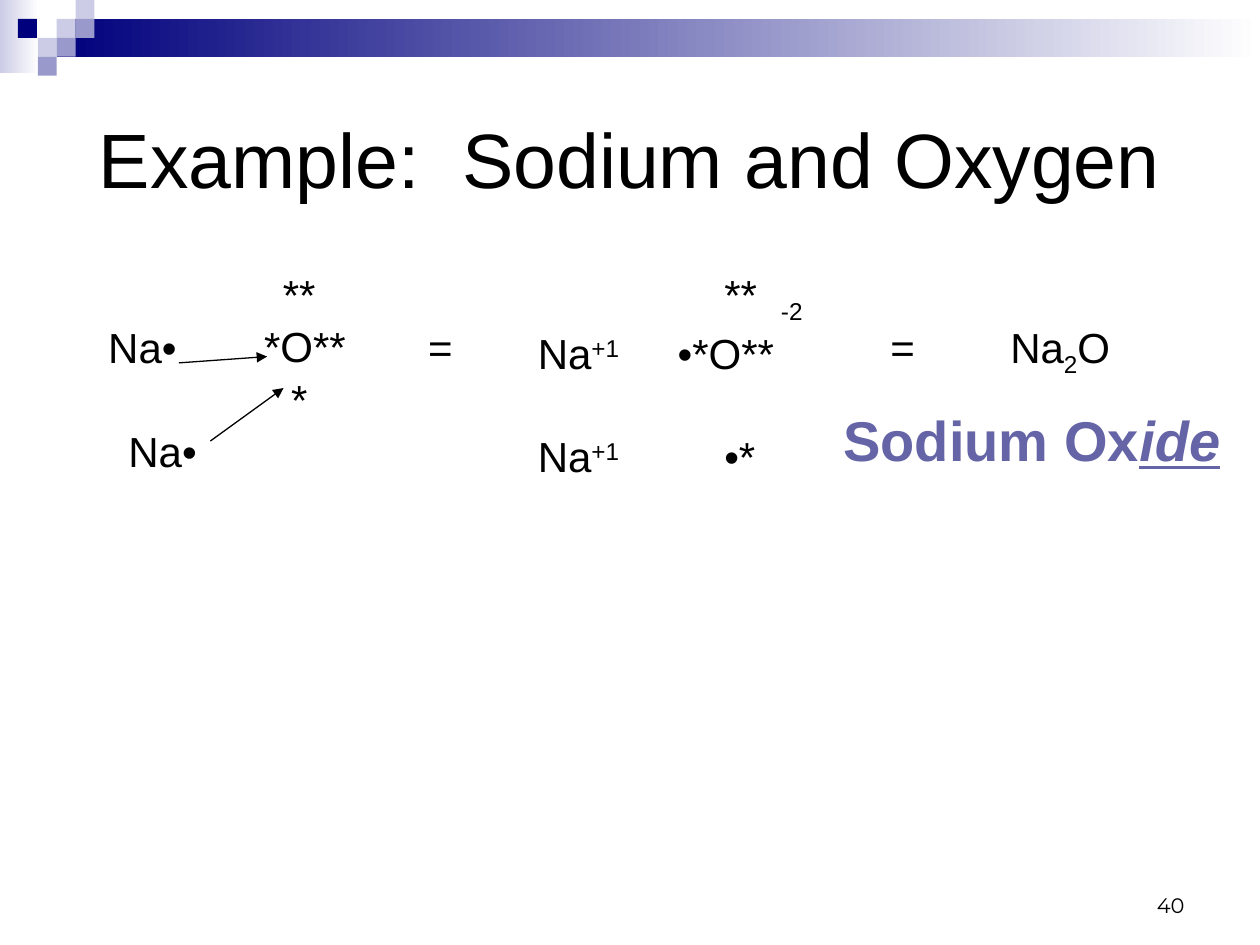
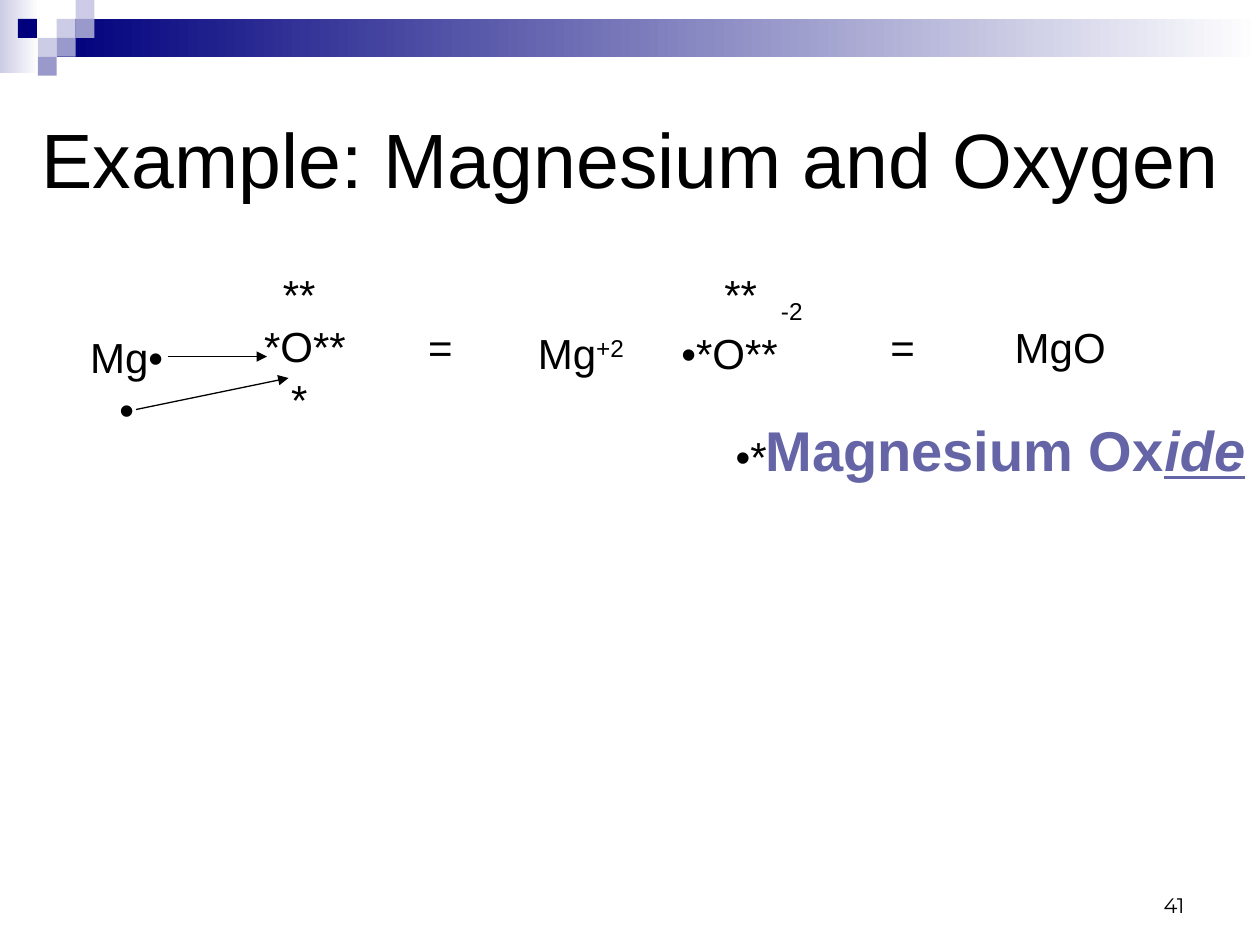
import dataclasses
import typing

import lxml.etree
import pptx
import pptx.dml.color
import pptx.enum.shapes
import pptx.enum.text
import pptx.oxml.ns
import pptx.util

Inches = pptx.util.Inches
Pt = pptx.util.Pt
RGB = pptx.dml.color.RGBColor
Align = pptx.enum.text.PP_ALIGN
Anchor = pptx.enum.text.MSO_ANCHOR
Box = tuple[float, float, float, float]
Spot = tuple[float, float]


# Theme: colours, fonts and type sizes
@dataclasses.dataclass(frozen=True)
class Theme:
    ink: RGB = RGB(0x00, 0x00, 0x00)
    white: RGB = RGB(0xFF, 0xFF, 0xFF)
    navy: RGB = RGB(0x00, 0x00, 0x7D)
    mid: RGB = RGB(0x99, 0x99, 0xCC)
    pale: RGB = RGB(0xCC, 0xCC, 0xE6)
    name: RGB = RGB(0x64, 0x64, 0xA6)
    font: str = "Arial"
    page_font: str = "Montserrat"
    title: int = 44
    head: int = 32
    body: int = 24
    small: int = 12


THEME = Theme()
BODY = {"size": Pt(THEME.body), "name": THEME.font, "color": THEME.ink}
TITLE = BODY | {"size": Pt(THEME.title)}
NAME = BODY | {"size": Pt(THEME.head), "color": THEME.name, "bold": True}
ENDING = {"italic": True, "underline": True}
PAGE = BODY | {"size": Pt(THEME.small), "name": THEME.page_font}


# Parts of a slide
@dataclasses.dataclass(frozen=True)
class Run:
    text: str
    base: int = 0
    style: dict[str, typing.Any] = dataclasses.field(default_factory=dict)


@dataclasses.dataclass(frozen=True)
class Line:
    runs: list[Run]
    tabs: tuple[float, ...] = ()
    indent: float = 0
    before: float = 1.25


@dataclasses.dataclass(frozen=True)
class Label:
    box: Box
    lines: list[Line]
    style: dict[str, typing.Any] = dataclasses.field(default_factory=lambda: BODY)
    align: Align = Align.CENTER
    anchor: Anchor = Anchor.TOP
    wrap: bool = True


@dataclasses.dataclass(frozen=True)
class Page:
    number: int
    title: str
    title_box: Box
    metal: list[Label]
    ions: Label
    result: list[Run]
    oxide: str
    oxide_box: Box
    arrows: list[tuple[Spot, Spot]]


def plain(*texts: str) -> list[Line]:
    return [Line([Run(text)]) for text in texts]


def ions(top: list[Run], low: list[Run], shift: tuple[float, float]) -> Label:
    """Ions after transfer: charge line, then two lines set on tab stops."""
    charge = Line([Run("\t**\t"), Run("-2", -25)], (1.48, 1.93))
    lines = [charge, Line(top, shift[:1]), Line(low, shift[1:], before=30)]
    return Label((4.17, 2.08, 2.33, 1.31), lines, align=Align.LEFT)


# Shared reaction signs
OXYGEN = Label((1.75, 2.08, 1.25, 1.31),
               [Line([Run("**")]), Line([Run("*O**")], indent=0.09), Line([Run("*")])])
EQUALS = [Label((left, 2.5, 0.83, 0.5), plain("=")) for left in (3.08, 6.75)]

SODIUM = [Run("Na"), Run("+1", 30)]
PAGES = [
    Page(40, "Example:  Sodium and Oxygen", (0.5, 0.5, 9, 1.5),
         [Label((left, top, 0.92, 0.5), plain("Na•"))
          for left, top in ((0.67, 2.5), (0.83, 3.33))],
         ions(SODIUM + [Run("\t•*O**")], SODIUM + [Run("\t•*")], (1.11, 1.48)),
         [Run("Na"), Run("2", -25), Run("O")],
         "Sodium Ox", (6.58, 3.17, 3.22, 0.64),
         [((1.67, 3.5), (2.25, 3.08)), ((1.42, 2.88), (2.12, 2.83))]),
    Page(41, "Example: Magnesium and Oxygen", (0.17, 0.5, 9.67, 1.5),
         [Label((0.42, 2.58, 1.17, 0.91), plain("Mg•", "•"))],
         ions([Run("Mg"), Run("+2", 30), Run("\t•*O**")], [Run("\t•*")], (1.14, 1.57)),
         [Run("MgO")],
         "Magnesium Ox", (5.96, 3.25, 4.04, 0.64),
         [((1.33, 2.83), (2.12, 2.83)), ((1.08, 3.25), (2.29, 3))]),
]


# Drawing helpers
def tag(name: str) -> str:
    return pptx.oxml.ns.qn(name)


def assign(target, values: dict[str, typing.Any]) -> None:
    for key, value in values.items():
        if key == "color":
            target.color.rgb = value
        else:
            setattr(target, key, value)


def place(shape, box: Box) -> None:
    keys = ("left", "top", "width", "height")
    assign(shape, {key: Inches(size) for key, size in zip(keys, box)})


def write(frame, label: Label) -> None:
    assign(frame, {"word_wrap": label.wrap, "vertical_anchor": label.anchor})
    for index, line in enumerate(label.lines):
        para = frame.add_paragraph() if index else frame.paragraphs[0]
        props = para._p.get_or_add_pPr()
        if line.indent:
            props.set("marL", str(Inches(line.indent)))
        if line.tabs:
            stops = lxml.etree.SubElement(props, tag("a:tabLst"))
            for stop in line.tabs:
                lxml.etree.SubElement(stops, tag("a:tab"), pos=str(Inches(stop)), algn="l")
        assign(para, {"alignment": label.align,
                      "space_before": Pt(line.before if index else 0)})
        for part in line.runs:
            run = para.add_run()
            run.text = part.text
            assign(run.font, label.style | part.style)
            if part.base:
                run._r.get_or_add_rPr().set("baseline", str(part.base * 1000))


def add_label(slide, label: Label) -> None:
    shape = slide.shapes.add_textbox(*map(Inches, label.box))
    write(shape.text_frame, label)


def add_block(slide, box: Box, *colors: RGB) -> None:
    """A plain block for one colour, a left-to-right fade for two."""
    kind = pptx.enum.shapes.MSO_SHAPE.RECTANGLE
    shape = slide.shapes.add_shape(kind, *map(Inches, box))
    shape.shadow.inherit = False
    shape.line.fill.background()
    if len(colors) == 1:
        shape.fill.solid()
        shape.fill.fore_color.rgb = colors[0]
        return
    shape.fill.gradient()
    shape.fill.gradient_angle = 0
    for stop, color in zip(shape.fill.gradient_stops, colors):
        stop.color.rgb = color


def add_band(slide) -> None:
    add_block(slide, (0, 0, 0.31, 0.58), THEME.pale, THEME.white)
    add_block(slide, (0.45, 0.15, 9.55, 0.3), THEME.navy, THEME.white)
    side = 0.15
    tiles = [(3, 1, THEME.pale), (4, 0, THEME.pale), (4, 1, THEME.mid),
             (2, 2, THEME.pale), (0.95, 1, THEME.navy), (3, 2, THEME.mid),
             (2, 3, THEME.mid)]
    for col, row, color in tiles:
        add_block(slide, (col * side, row * side, side, side), color)


def add_arrow(slide, start: Spot, end: Spot) -> None:
    kind = pptx.enum.shapes.MSO_CONNECTOR.STRAIGHT
    arrow = slide.shapes.add_connector(kind, *map(Inches, start + end))
    assign(arrow.line, {"color": THEME.ink, "width": Pt(0.75)})
    lxml.etree.SubElement(arrow.line._get_or_add_ln(), tag("a:tailEnd"), type="triangle")
    lxml.etree.SubElement(arrow._element.spPr, tag("a:effectLst"))


def add_page(deck, page: Page) -> None:
    slide = deck.slides.add_slide(deck.slide_layouts[5])
    add_band(slide)

    # Title
    title = slide.shapes.title
    place(title, page.title_box)
    write(title.text_frame, Label(page.title_box, plain(page.title), TITLE,
                                  anchor=Anchor.MIDDLE))

    # Reaction
    for start, end in page.arrows:
        add_arrow(slide, start, end)
    result = Label((7.58, 2.5, 1.67, 0.5), [Line(page.result)])
    for label in [*page.metal, OXYGEN, *EQUALS, page.ions, result]:
        add_label(slide, label)

    # Compound name and page number
    name = Line([Run(page.oxide), Run("ide", style=ENDING)])
    add_label(slide, Label(page.oxide_box, [name], NAME, wrap=False))
    add_label(slide, Label((7.17, 6.83, 2.33, 0.5), plain(str(page.number)), PAGE,
                           Align.RIGHT, Anchor.BOTTOM))


def main() -> None:
    deck = pptx.Presentation()
    assign(deck, {"slide_width": Inches(10), "slide_height": Inches(7.5)})
    for page in PAGES:
        add_page(deck, page)
    deck.save("out.pptx")


if __name__ == "__main__":
    main()
